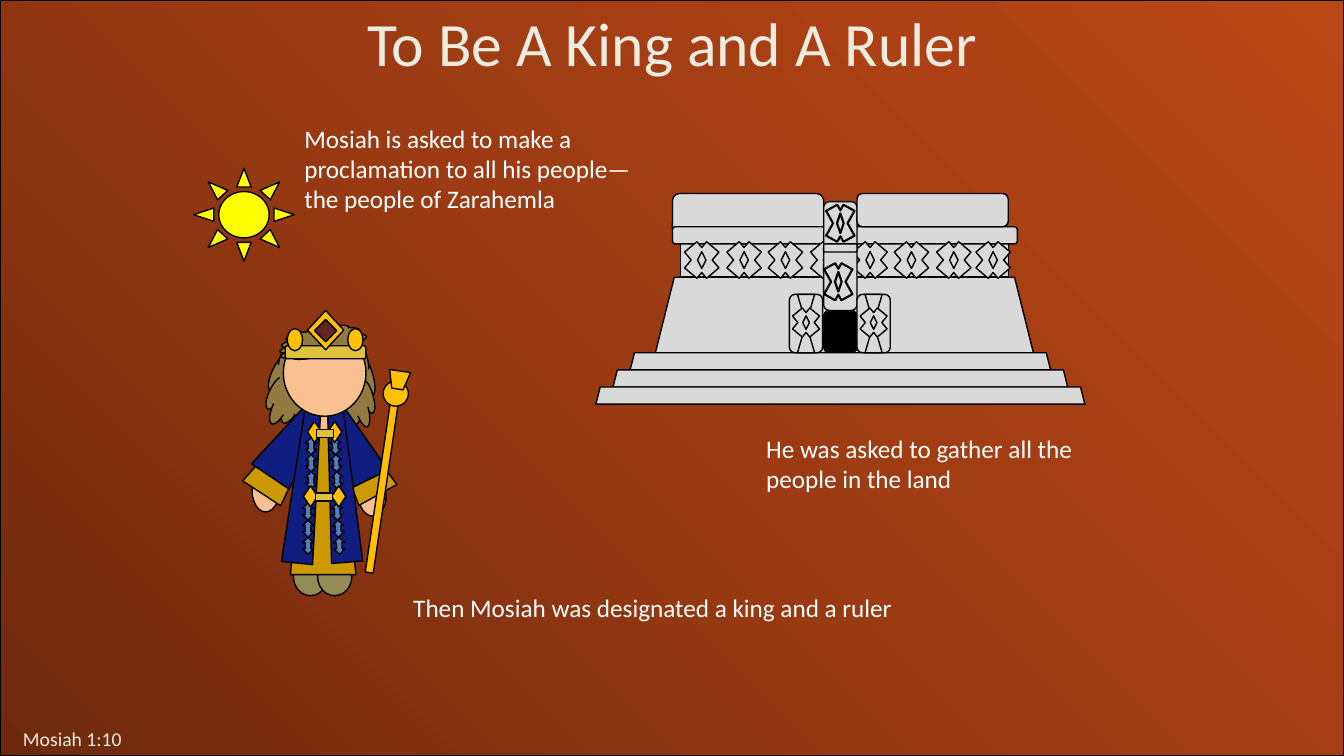
from copy import deepcopy

from pptx import Presentation
from pptx.dml.color import RGBColor
from pptx.enum.shapes import MSO_SHAPE
from pptx.enum.text import MSO_AUTO_SIZE, PP_ALIGN
from pptx.oxml.ns import qn
from pptx.util import Pt

RECT, ROUND = MSO_SHAPE.RECTANGLE, MSO_SHAPE.ROUNDED_RECTANGLE
OVAL, DIAMOND = MSO_SHAPE.OVAL, MSO_SHAPE.DIAMOND
TRAPEZOID, CLOUD = MSO_SHAPE.TRAPEZOID, MSO_SHAPE.CLOUD
ARROW, CROSS = MSO_SHAPE.LEFT_RIGHT_ARROW, MSO_SHAPE.MATH_MULTIPLY
HOURGLASS, SUN = MSO_SHAPE.FLOWCHART_COLLATE, MSO_SHAPE.SUN
GROW, LEFT, CENTER = MSO_AUTO_SIZE.SHAPE_TO_FIT_TEXT, PP_ALIGN.LEFT, PP_ALIGN.CENTER

EMU_PER_PX = 9144
PAGE_WIDTH, PAGE_HEIGHT = 1333, 750
FONT = "Calibri"
BLACK, WHITE, CREAM = "000000", "FFFFFF", "EEECE1"
HAIR, SKIN, SHOE, TRIM, ROBE = "927B40", "FAC090", "948A54", "CC9900", "111E81"
STUD, GOLD, CLASP, JEWEL, STONE = "4F81BD", "FFC000", "E0C13C", "632523", "D9D9D9"
YELLOW = "FFFF00"
BACKDROP_STOPS = [(0, "6E290D"), (0.5, "9C3B13"), (1, "BA4616")]

TITLE = ("To Be A King and A Ruler", (167, 0, 1000, 84), 44, CREAM, CENTER)
REFERENCE = ("Mosiah 1:10", (13, 716, 267, 34), 14, CREAM, LEFT)
PROCLAMATION = ("Mosiah is asked to make a proclamation to all his people—the people of Zarahemla",
                (292, 117, 375, 101), 18, WHITE, LEFT)
DESIGNATION = ("Then Mosiah was designated a king and a ruler", (400, 583, 592, 40), 18, WHITE, LEFT)
GATHERING = ("He was asked to gather all the people in the land", (750, 425, 375, 71), 18, WHITE, LEFT)

BODY = [
    (CLOUD, HAIR, (268, 330, 45, 95), {"turn": 25.3, "flip": True}),
    (CLOUD, HAIR, (331, 332, 40, 93), {"turn": 344.3}),
    (OVAL, SKIN, (356, 473, 27, 39), {}),
    (OVAL, SKIN, (250, 465, 27, 43), {}),
    (OVAL, SHOE, (291, 553, 34, 38), {}),
    (OVAL, SHOE, (315, 553, 34, 38), {}),
    (TRAPEZOID, TRIM, (259, 416, 45, 80), {"turn": 33.3}),
    (TRAPEZOID, ROBE, (266, 406, 45, 73), {"turn": 34}),
    (TRAPEZOID, TRIM, (334, 416, 43, 80), {"turn": 331.2}),
    (TRAPEZOID, ROBE, (326, 407, 45, 73), {"turn": 333.9}),
    (TRAPEZOID, TRIM, (288, 409, 65, 161), {}),
    (OVAL, SKIN, (306, 396, 27, 34), {}),
    (TRAPEZOID, ROBE, (323, 406, 31, 152), {"turn": 355.6}),
    (TRAPEZOID, ROBE, (287, 405, 31, 154), {"turn": 5.9}),
    (OVAL, SKIN, (281, 327, 82, 86), {}),
]
STUD_TOPS = [437, 454, 471, 502, 519, 536]
RIGHT_STUDS = [324, 325, 326, 326, 327, 328]
LEFT_STUDS = [300, 300, 300, 297, 297, 297]
CLASP_ENDS = [(329, 482), (301, 482), (305, 418), (325, 418)]
CLASP_BARS = [(314, 426), (313, 489)]
FRINGE = (CLOUD, HAIR, (305, 296, 30, 87), {"turn": 262.4, "flip": True})

WALLS = [
    (TRAPEZOID, STONE, (650, 275, 375, 75), {}),
    (RECT, STONE, (675, 233, 325, 42), {}),
    (ROUND, STONE, (667, 192, 150, 42), {}),
    (ROUND, STONE, (667, 225, 342, 17), {}),
]
FRIEZE_LEFTS = [675, 717, 758, 800, 842, 883, 925, 964]
DOORWAY = [
    (ROUND, BLACK, (817, 308, 33, 42), {}),
    (ROUND, STONE, (817, 200, 33, 108), {}),
]
ROOF = [
    (ROUND, STONE, (850, 192, 150, 33), {}),
    (ROUND, STONE, (817, 242, 33, 8), {}),
]
COLUMN_WEIGHT = 1.5
STEP_COUNT, STEP_HEIGHT = 3, 17
PILLAR_LEFTS = [783, 850]

CROWN = [
    (ROUND, CLASP, (283, 343, 80, 13), {}),
    (DIAMOND, GOLD, (305, 308, 36, 39), {}),
    (OVAL, GOLD, (345, 326, 15, 22), {}),
    (OVAL, GOLD, (285, 326, 15, 22), {}),
    (DIAMOND, JEWEL, (312, 317, 22, 22), {}),
]
STAFF = [
    (RECT, GOLD, (375, 394, 8, 175), {"turn": 8.4}),
    (OVAL, GOLD, (380, 378, 25, 25), {"turn": 8.4}),
    (TRAPEZOID, GOLD, (385, 368, 21, 18), {"turn": 188.4, "bend": 0.268}),
]


def px(length):
    return round(length * EMU_PER_PX)


def color(code):
    return RGBColor.from_string(code)


def draw(canvas, kind, fill, frame, turn=0, flip=False, bend=None, weight=1):
    box = canvas.shapes.add_shape(kind, *map(px, frame))
    box.shadow.inherit = False
    box.fill.solid()
    box.fill.fore_color.rgb = color(fill)
    box.line.color.rgb = color(BLACK)
    box.line.width = Pt(weight)
    box.rotation = turn
    if flip:
        box._element.spPr.find(qn("a:xfrm")).set("flipH", "1")
    if bend is not None:
        box.adjustments[0] = bend
    return box


def draw_all(canvas, parts):
    for kind, fill, frame, options in parts:
        draw(canvas, kind, fill, frame, **options)


def draw_motif(canvas, left, top, width, height, weight=1):
    draw(canvas, CROSS, STONE, (left, top, width, height), bend=0.381, weight=weight)
    inner = (left + width * 0.4, top + height / 3, width / 5, height / 3)
    draw(canvas, DIAMOND, STONE, inner, weight=weight)


def write(page, text, frame, size, ink, align):
    box = page.shapes.add_textbox(*map(px, frame))
    box.text_frame.word_wrap = True
    box.text_frame.auto_size = GROW
    para = box.text_frame.paragraphs[0]
    para.alignment = align
    span = para.add_run()
    span.text = text
    for name, value in {"name": FONT, "size": Pt(size)}.items():
        setattr(span.font, name, value)
    span.font.color.rgb = color(ink)


def draw_backdrop(page):
    box = draw(page, RECT, BLACK, (0, 0, PAGE_WIDTH, PAGE_HEIGHT))
    box.fill.gradient()
    box.fill.gradient_angle = 45
    stop_list = box._element.spPr.find(".//" + qn("a:gsLst"))
    stop_list.append(deepcopy(stop_list[0]))
    for stop, (position, code) in zip(box.fill.gradient_stops, BACKDROP_STOPS):
        stop.position = position
        stop.color.rgb = color(code)


def draw_king(page):
    king = page.shapes.add_group_shape()
    draw_all(king, BODY)
    for lefts, turn in ((RIGHT_STUDS, 86.7), (LEFT_STUDS, 90)):
        for left, top in zip(lefts, STUD_TOPS):
            draw(king, ARROW, STUD, (left, top, 17, 11), turn=turn)
    for left, top in CLASP_ENDS:
        draw(king, DIAMOND, GOLD, (left, top, 14, 21))
    for left, top in CLASP_BARS:
        draw(king, RECT, CLASP, (left, top, 17, 8))
    draw_all(king, [FRINGE])


def draw_temple(page):
    temple = page.shapes.add_group_shape()
    draw_all(temple, WALLS)
    for left in FRIEZE_LEFTS:
        draw_motif(temple, left, 233, 42, 50)
    draw_all(temple, DOORWAY)
    draw_motif(temple, 815, 250, 33, 59, COLUMN_WEIGHT)
    draw_all(temple, ROOF)
    draw_motif(temple, 817, 192, 33, 59, COLUMN_WEIGHT)
    for step in range(STEP_COUNT):
        inset = step * STEP_HEIGHT
        draw(temple, TRAPEZOID, STONE, (625 - inset, 350 + inset, 417 + 2 * inset, STEP_HEIGHT))
    for left in PILLAR_LEFTS:
        draw(temple, ROUND, STONE, (left, 292, 33, 58))
        draw(temple, HOURGLASS, STONE, (left + 8, 292, 17, 58))
        draw_motif(temple, left, 300, 33, 40)


def main():
    deck = Presentation()
    deck.slide_width, deck.slide_height = px(PAGE_WIDTH), px(PAGE_HEIGHT)
    page = deck.slides.add_slide(deck.slide_layouts[6])
    draw_backdrop(page)
    write(page, *TITLE)
    write(page, *REFERENCE)
    draw_king(page)
    write(page, *PROCLAMATION)
    write(page, *DESIGNATION)
    draw_temple(page)
    draw(page, SUN, YELLOW, (192, 167, 100, 92))
    write(page, *GATHERING)
    for parts in (CROWN, STAFF):
        draw_all(page.shapes.add_group_shape(), parts)
    deck.save("out.pptx")


if __name__ == "__main__":
    main()
